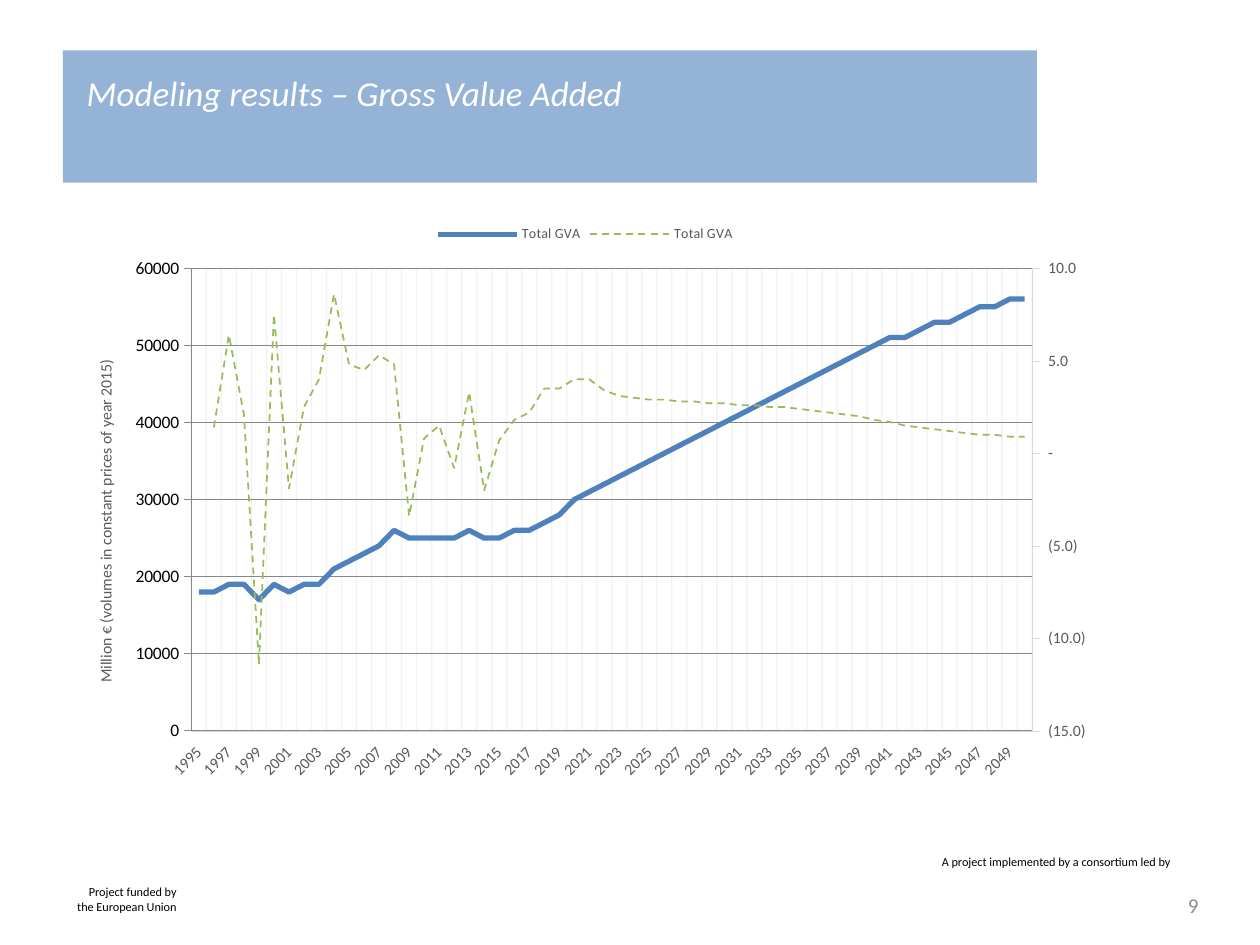
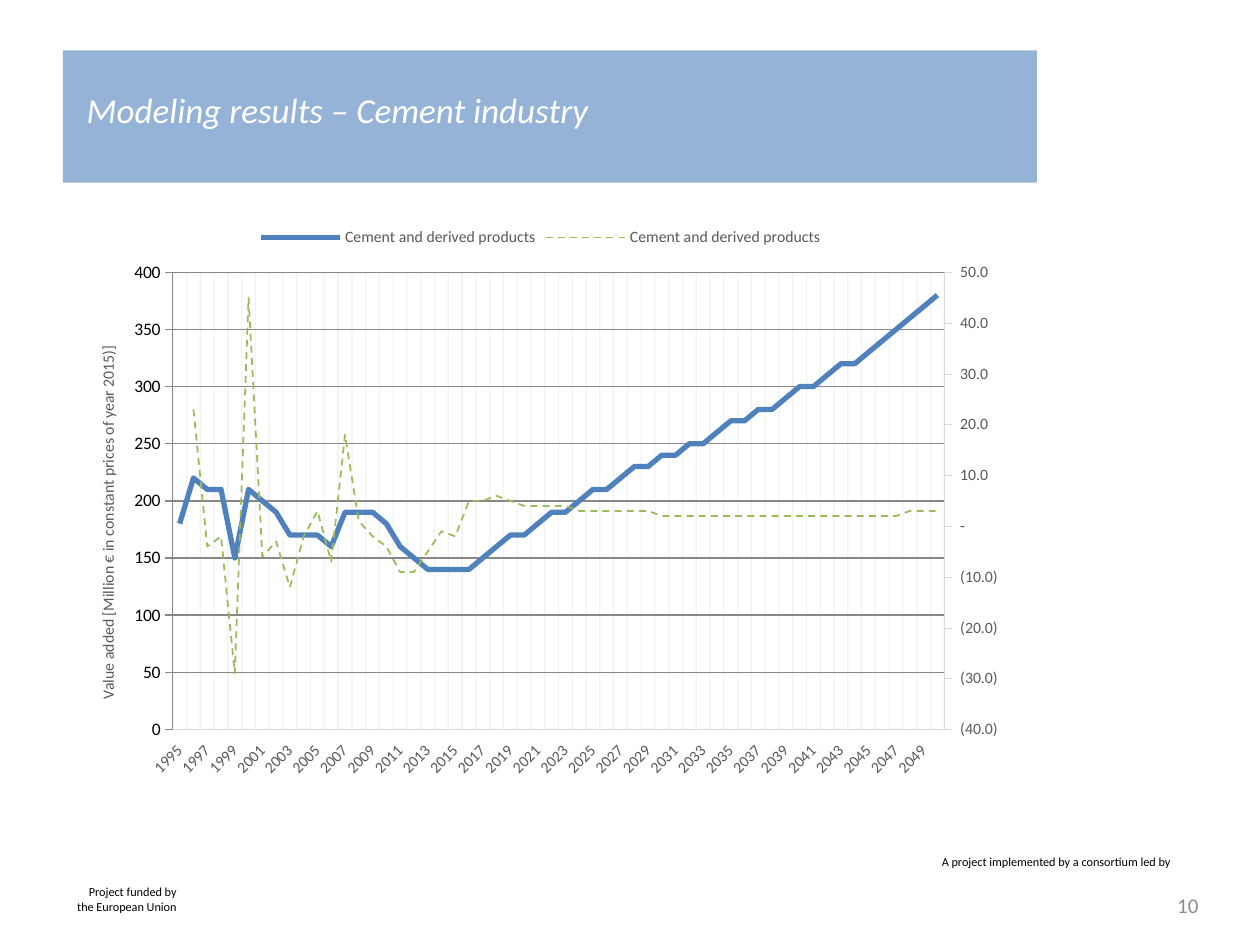
"""Two slides of modelling results: each value line with its growth rate on a right axis."""
from copy import deepcopy

from lxml import etree
from pptx import Presentation
from pptx import util as u
from pptx.chart.axis import ValueAxis
from pptx.chart.data import CategoryChartData
from pptx.dml.color import RGBColor
from pptx.enum import chart as ch, dml, shapes, text
from pptx.oxml.ns import qn

FONT = "Calibri"
BAND, WHITE, BLACK = "95B3D7", "FFFFFF", "000000"
LABEL, RULE, PAGE = "595959", "D9D9D9", "8C8C8C"
LEVEL, GROWTH = "4F81BD", "9BBB59"

YEARS = [str(year) for year in range(1995, 2051)]
LEFT_FORMAT = '_(* #,##0_);_(* \\(#,##0\\);_(* "-"??_);_(@_)'
RIGHT_FORMAT = LEFT_FORMAT.replace("##0", "##0.0")
FUNDING = ["Project funded by", "the European Union"]
CONSORTIUM = ["A project implemented by a consortium led by"]

RESULTS = [
    {
        "title": "Modeling results – Gross Value Added", "title_top": 0.52, "page": "9",
        "series": "Total GVA", "axis_title": "Million € (volumes in constant prices of year 2015)",
        "frame": (0.51, 1.68, 8.27, 4.59), "plot": (1.52, 2.13, 6.67, 3.67),
        "axis_title_at": (0.73, 2.83), "legend_size": 8,
        "left_scale": (0, 60000, 10000), "right_scale": (-15, 10, 5),
        "level": [1000 * k for k in (
            18, 18, 19, 19, 17, 19, 18, 19, 19, 21, 22, 23, 24, 26, 25, 25, 25, 25, 26, 25,
            25, 26, 26, 27, 28, 30, 31, 32, 33, 34, 35, 36, 37, 38, 39, 40, 41, 42, 43, 44,
            45, 46, 47, 48, 49, 50, 51, 51, 52, 53, 53, 54, 55, 55, 56, 56)],
        "growth": [
            None, 1.4, 6.4, 2.1, -11.4, 7.5, -1.9, 2.5, 4, 8.6, 4.8, 4.5, 5.3, 4.8, -3.4,
            0.8, 1.5, -0.8, 3.3, -2, 0.7, 1.8, 2.2, 3.5, 3.5, 4, 4, 3.4, 3.1, 3, 2.9, 2.9,
            2.8, 2.8, 2.7, 2.7, 2.6, 2.6, 2.5, 2.5, 2.4, 2.3, 2.2, 2.1, 2, 1.8, 1.7, 1.5,
            1.4, 1.3, 1.2, 1.1, 1, 1, 0.9, 0.9],
    },
    {
        "title": "Modeling results – Cement industry", "title_top": 0.65, "page": "10",
        "series": "Cement and derived products",
        "axis_title": "Value added [Million € in constant prices of year 2015)]",
        "frame": (0.51, 1.7, 7.56, 4.57), "plot": (1.37, 2.16, 6.12, 3.63),
        "axis_title_at": (0.75, 2.72), "legend_size": 9,
        "left_scale": (0, 400, 50), "right_scale": (-40, 50, 10),
        "level": [
            180, 220, 210, 210, 150, 210, 200, 190, 170, 170, 170, 160, 190, 190, 190, 180,
            160, 150, 140, 140, 140, 140, 150, 160, 170, 170, 180, 190, 190, 200, 210, 210,
            220, 230, 230, 240, 240, 250, 250, 260, 270, 270, 280, 280, 290, 300, 300, 310,
            320, 320, 330, 340, 350, 360, 370, 380],
        "growth": [
            None, 23, -4, -2, -29, 45, -6, -3, -12, -2, 3, -7, 18, 1, -2, -4, -9, -9, -5, -1,
            -2, 5, 5, 6, 5, 4, 4, 4, 4] + [3] * 6 + [2] * 18 + [3] * 3,
    },
]


def rgb(colour):
    return RGBColor.from_string(colour)


def inches(box):
    return [u.Inches(length) for length in box]


def style(font, size, colour, italic=None):
    font.name, font.size, font.italic = FONT, u.Pt(size), italic
    font.color.rgb = rgb(colour)


def write(shape, lines, size, colour, align, italic=None):
    frame = shape.text_frame
    frame.word_wrap = True
    for number, line in enumerate(lines):
        paragraph = frame.add_paragraph() if number else frame.paragraphs[0]
        paragraph.alignment = align
        run = paragraph.add_run()
        run.text = line
        style(run.font, size, colour, italic)
    return frame


def add_panel(slide, box, colour):
    panel = slide.shapes.add_shape(shapes.MSO_SHAPE.RECTANGLE, *inches(box))
    panel.shadow.inherit = False
    panel.fill.solid()
    panel.fill.fore_color.rgb = rgb(colour)
    panel.line.fill.background()
    return panel


def add_surround(slide, result):
    right = text.PP_ALIGN.RIGHT
    add_panel(slide, (0.5, 0.4, 7.73, 1.05), BAND)
    funding = write(add_panel(slide, (0.45, 6.97, 1.05, 0.28), WHITE), FUNDING, 7, BLACK, right)
    consortium = write(add_panel(slide, (7.36, 6.66, 2.13, 0.25), WHITE), CONSORTIUM, 7, BLACK, right)
    for frame in (funding, consortium):
        frame.vertical_anchor = text.MSO_ANCHOR.TOP
    consortium.margin_left, consortium.margin_right, consortium.margin_top = inches((0, 0.2, 0.12))
    page = slide.shapes.add_textbox(*inches((7.28, 6.98, 2.33, 0.4)))
    write(page, [result["page"]], 12, PAGE, right).vertical_anchor = text.MSO_ANCHOR.MIDDLE
    title = slide.shapes.add_textbox(*inches((0.59, result["title_top"], 7.56, 0.44)))
    write(title, [result["title"]], 20, WHITE, text.PP_ALIGN.LEFT, True)


def place(parent, before, frame, box, inner=False):
    """Give a chart part a fixed place, as shares of the chart frame."""
    for old in parent.findall(qn("c:layout")):
        parent.remove(old)
    layout = etree.Element(qn("c:layout"))
    manual = etree.SubElement(layout, qn("c:manualLayout"))
    left, top, width, height = frame
    shares = [(box[0] - left) / width, (box[1] - top) / height]
    shares += [side / whole for side, whole in zip(box[2:], (width, height))]
    settings = [("layoutTarget", "inner")] if inner else []
    settings += [("xMode", "edge"), ("yMode", "edge")]
    settings += [(key, f"{share:.3f}") for key, share in zip("xywh", shares)]
    for tag, value in settings:
        etree.SubElement(manual, qn("c:" + tag)).set("val", value)
    before.addprevious(layout)


def split_to_right_axis(chart):
    """Move the second series to its own line plot and return its value axis."""
    area = chart._chartSpace.chart.plotArea
    plot = area.find(qn("c:lineChart"))
    category, value = area.find(qn("c:catAx")), area.find(qn("c:valAx"))
    if value.find(qn("c:crossBetween")) is None:
        between = etree.Element(qn("c:crossBetween"))
        between.set("val", "between")
        value.find(qn("c:crosses")).addnext(between)
    right_plot, right_category, right_value = map(deepcopy, (plot, category, value))
    plot.remove(plot.findall(qn("c:ser"))[1])
    right_plot.remove(right_plot.findall(qn("c:ser"))[0])
    plot.addnext(right_plot)
    value.addnext(right_value)
    right_value.addnext(right_category)
    new_ids = {category.find(qn("c:axId")).get("val"): "5001",
               value.find(qn("c:axId")).get("val"): "5002"}
    for part in (right_plot, right_category, right_value):
        for tag in ("c:axId", "c:crossAx"):
            for node in part.findall(qn(tag)):
                node.set("val", new_ids[node.get("val")])
    right_category.find(qn("c:delete")).set("val", "1")
    right_value.find(qn("c:axPos")).set("val", "r")
    right_value.find(qn("c:crosses")).set("val", "max")
    return ValueAxis(right_value)


def style_axis(axis, tick, grid):
    axis.major_tick_mark, axis.minor_tick_mark = tick, ch.XL_TICK_MARK.NONE
    style(axis.tick_labels.font, 9, LABEL)
    axis.format.line.color.rgb = rgb(RULE)
    axis.format.line.width = u.Pt(0.25)
    axis.has_major_gridlines = grid
    if grid:
        line = axis.major_gridlines.format.line
        line.color.rgb, line.width = rgb(RULE), u.Pt(0.75)
        tint = next(axis.major_gridlines._xAx.find(qn("c:majorGridlines")).iter(qn("a:srgbClr")))
        etree.SubElement(tint, qn("a:alpha")).set("val", "32000")


def scale(axis, limits, number_format):
    axis.minimum_scale, axis.maximum_scale, axis.major_unit = limits
    axis.tick_labels.number_format = number_format
    axis.tick_labels.number_format_is_linked = False


def add_result_chart(slide, result):
    data = CategoryChartData()
    data.categories = YEARS
    for values in (result["level"], result["growth"]):
        data.add_series(result["series"], values)
    frame = result["frame"]
    chart = slide.shapes.add_chart(ch.XL_CHART_TYPE.LINE, *inches(frame), data).chart
    style(chart.font, 10, BLACK)
    chart.has_title = False
    right = split_to_right_axis(chart)
    years, left = chart.category_axis, chart.value_axis

    for axis, tick, grid in ((years, ch.XL_TICK_MARK.NONE, True),
                             (left, ch.XL_TICK_MARK.NONE, True),
                             (right, ch.XL_TICK_MARK.OUTSIDE, False)):
        style_axis(axis, tick, grid)
    scale(left, result["left_scale"], LEFT_FORMAT)
    scale(right, result["right_scale"], RIGHT_FORMAT)

    years.tick_label_position = ch.XL_TICK_LABEL_POSITION.LOW
    years_xml = years._element
    years_xml.find(qn("c:txPr")).find(qn("a:bodyPr")).set("rot", "-2700000")
    skip = etree.Element(qn("c:tickLblSkip"))
    skip.set("val", "2")
    years_xml.find(qn("c:noMultiLvlLbl")).addprevious(skip)

    left.has_title = True
    run = left.axis_title.text_frame.paragraphs[0].add_run()
    run.text = result["axis_title"]
    style(run.font, 9, LABEL)
    run.font.bold = False
    heading = left._element.find(qn("c:title"))
    heading.find(".//" + qn("a:bodyPr")).set("rot", "-5400000")
    place(heading, heading.find(qn("c:overlay")), frame, result["axis_title_at"])
    area = chart._chartSpace.chart.plotArea
    place(area, area.find(qn("c:lineChart")), frame, result["plot"], inner=True)

    chart.has_legend = True
    chart.legend.position = ch.XL_LEGEND_POSITION.TOP
    chart.legend.include_in_layout = False
    style(chart.legend.font, result["legend_size"], LABEL)

    for plot, colour, width, dash in zip(chart.plots, (LEVEL, GROWTH), (3, 1),
                                         (None, dml.MSO_LINE.DASH)):
        plot.vary_by_categories = False
        series = plot.series[0]
        series.smooth = False
        series.marker.style = ch.XL_MARKER_STYLE.NONE
        line = series.format.line
        line.color.rgb, line.width, line.dash_style = rgb(colour), u.Pt(width), dash


def main():
    deck = Presentation()
    deck.slide_width, deck.slide_height = inches((10, 7.5))
    for result in RESULTS:
        slide = deck.slides.add_slide(deck.slide_layouts[6])
        add_surround(slide, result)
        add_result_chart(slide, result)
    deck.save("out.pptx")


if __name__ == "__main__":
    main()
